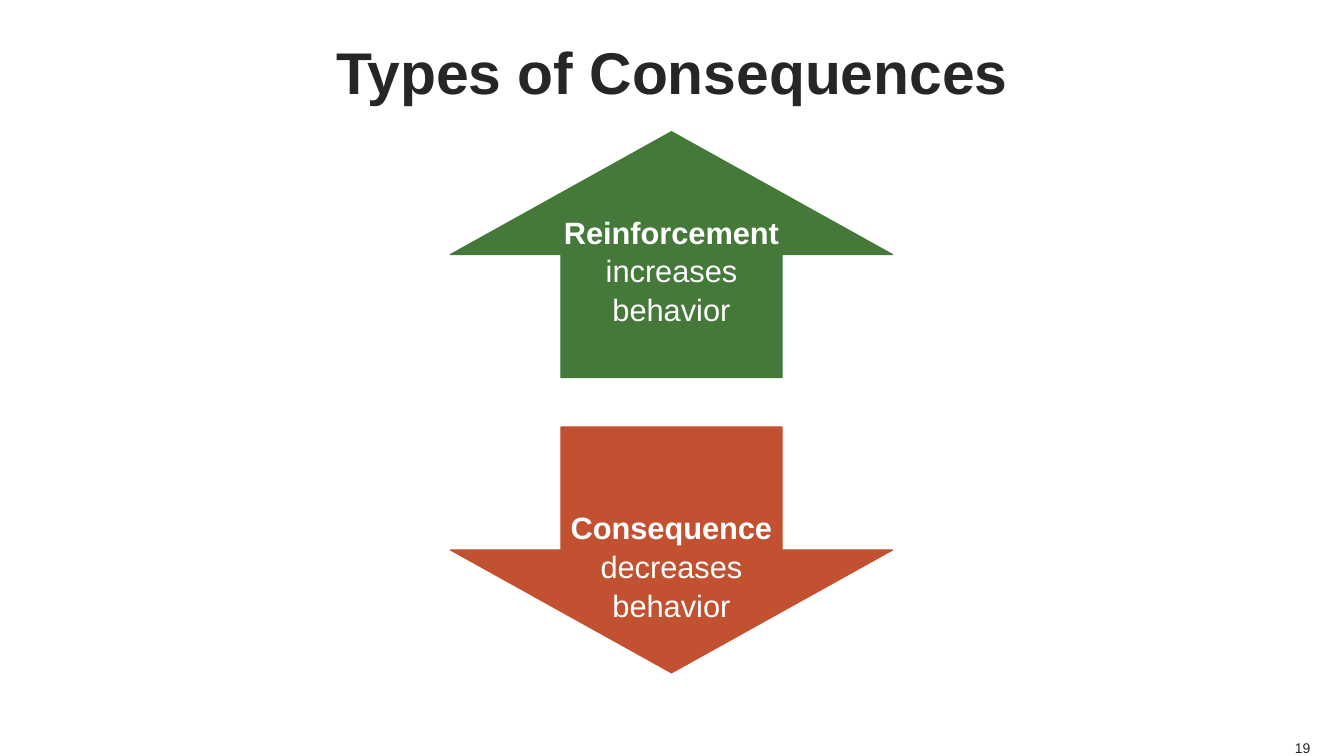
from pptx import Presentation
from pptx.dml.color import RGBColor
from pptx.enum.shapes import MSO_SHAPE
from pptx.enum.text import MSO_ANCHOR, PP_ALIGN
from pptx.util import Pt

ARROW = MSO_SHAPE.RIGHT_ARROW
TOP, MIDDLE, BOTTOM = MSO_ANCHOR.TOP, MSO_ANCHOR.MIDDLE, MSO_ANCHOR.BOTTOM
CENTER, RIGHT = PP_ALIGN.CENTER, PP_ALIGN.RIGHT
FONT = "Arial"
COLORS = {"ink": "262626", "white": "FFFFFF", "green": "447939", "rust": "C25131"}
ARROW_LENGTH, ARROW_SPAN = 175.7, 316.1
LABEL_DROP, LABEL_HEIGHT = 53.6, 87.1


def color(name):
    """Return the named colour."""
    return RGBColor.from_string(COLORS[name])


def add_text(s, box, paragraphs, size, fill, align=CENTER, anchor=TOP,
             inset=(0, 0), wrap=True, spacing=None):
    """Place paragraphs of (text, bold) runs in a box."""
    tf = s.shapes.add_textbox(*map(Pt, box)).text_frame
    tf.word_wrap = wrap
    tf.vertical_anchor = anchor
    tf.margin_left = tf.margin_right = Pt(inset[0])
    tf.margin_top = tf.margin_bottom = Pt(inset[1])
    for i, runs in enumerate(paragraphs):
        p = tf.paragraphs[0] if i == 0 else tf.add_paragraph()
        p.alignment = align
        if spacing:
            p.line_spacing = spacing
        for text, bold in runs:
            r = p.add_run()
            r.text = text
            r.font.name = FONT
            r.font.size = Pt(size)
            r.font.bold = bold
            r.font.color.rgb = color(fill)


def add_consequence(s, box, fill, rotation, label_width, paragraphs):
    """Fill a box with a vertical arrow and its centred label."""
    left, top, width, height = box
    center_x, center_y = left + width / 2, top + height / 2
    sp = s.shapes.add_shape(ARROW, Pt(center_x - height / 2), Pt(center_y - width / 2),
                            Pt(height), Pt(width))
    sp.rotation = rotation
    sp.shadow.inherit = False
    sp.fill.solid()
    sp.fill.fore_color.rgb = color(fill)
    sp.line.color.rgb = color(fill)
    sp.line.width = Pt(0.75)
    label = (center_x - label_width / 2, top + LABEL_DROP, label_width, LABEL_HEIGHT)
    add_text(s, label, paragraphs, 22, "white", inset=(7.2, 3.6), spacing=1.05)


def main():
    """Build and save the slide."""
    prs = Presentation()
    prs.slide_width, prs.slide_height = Pt(960), Pt(540)
    s = prs.slides.add_slide(prs.slide_layouts[6])
    add_text(s, (36, 0, 888, 100.8), [[("Types of Consequences", True)]], 42, "ink",
             anchor=MIDDLE)
    arrows = [
        ("green", 270, 197.3,
         [[("Reinforcement ", True), ("increases behavior", False)]]),
        ("rust", 90, 185,
         [[("Consequence", True)], [("decreases behavior", False)]]),
    ]
    for i, (fill, rotation, label_width, paragraphs) in enumerate(arrows):
        box = (321.6, 94 + i * 211, ARROW_SPAN, ARROW_LENGTH)
        add_consequence(s, box, fill, rotation, label_width, paragraphs)
    add_text(s, (923.8, 527.8, 12.2, 12.2), [[("19", False)]], 10, "ink",
             align=RIGHT, anchor=BOTTOM, wrap=False)
    prs.save("out.pptx")


if __name__ == "__main__":
    main()
